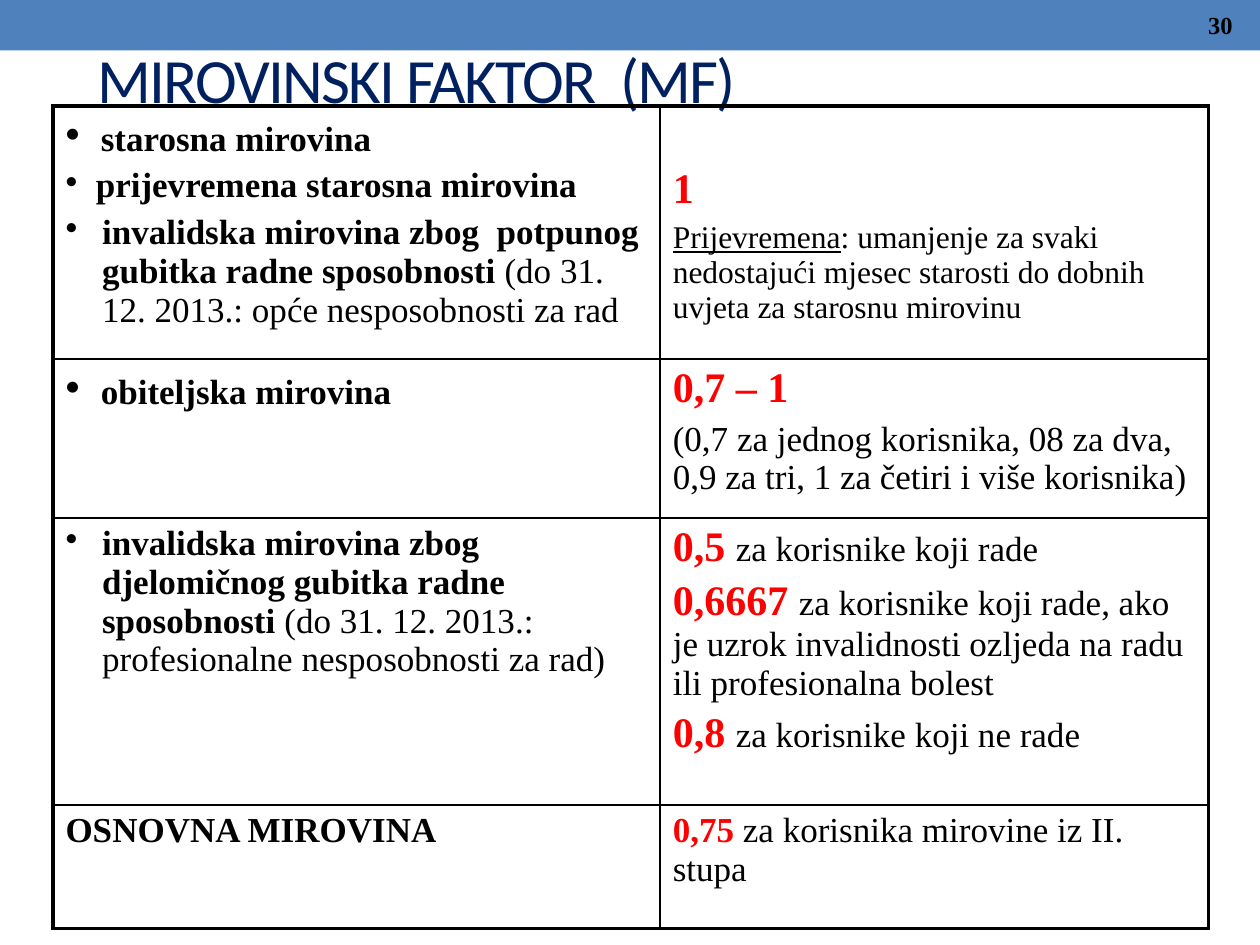
from lxml import etree
from pptx import Presentation
from pptx.dml.color import RGBColor
from pptx.enum.shapes import MSO_SHAPE
from pptx.enum.text import MSO_ANCHOR, PP_ALIGN
from pptx.oxml.ns import qn
from pptx.util import Inches, Pt

RECTANGLE = MSO_SHAPE.RECTANGLE
MIDDLE = MSO_ANCHOR.MIDDLE
LEFT, RIGHT = PP_ALIGN.LEFT, PP_ALIGN.RIGHT

COLORS = {"band": "4F81BD", "title": "002060", "text": "000000", "factor": "FF0000"}
SERIF = "Times New Roman"
GRID_COLUMNS, GRID_ROWS = 100, 75
SLIDE_WIDTH, SLIDE_HEIGHT = Inches(10), Inches(7.5)

FORMATS = {
    "bold": {"size": Pt(20), "bold": True, "color": "text"},
    "plain": {"size": Pt(20), "bold": False, "color": "text"},
    "note": {"size": Pt(18), "bold": False, "color": "text"},
    "note_head": {"size": Pt(18), "bold": False, "underline": True, "color": "text"},
    "factor": {"size": Pt(24), "bold": True, "color": "factor"},
    "small_factor": {"size": Pt(20), "bold": True, "color": "factor"},
    "page_number": {"size": Pt(14), "bold": True, "color": "text"},
}

# Paragraph layouts: hanging indent and tab stop in inches, bullet size in percent
LAYOUTS = {
    "body": {},
    "large_bullet": {"indent": 0.28, "bullet": 120},
    "tight_bullet": {"indent": 0.24, "bullet": 100},
    "bullet": {"indent": 0.29, "bullet": 100},
    "tabbed": {"tab": 1.33},
}

COLUMN_WIDTHS = [48.2, 43.5]
ROW_HEIGHTS = [20.1, 12.6, 22.8, 9.8]
TOP_MARGINS = {(0, 0): 0.11, (0, 1): 0.48, (1, 0): 0.11}

CELLS = [
    [
        [
            ("large_bullet", [("starosna mirovina", "bold")]),
            ("tight_bullet", [("prijevremena starosna mirovina", "bold")]),
            ("bullet", [
                ("invalidska mirovina zbog  potpunog gubitka radne sposobnosti ", "bold"),
                ("(do 31. 12. 2013.: opće nesposobnosti za rad", "plain")]),
        ],
        [
            ("body", [("1", "factor")]),
            ("body", [
                ("Prijevremena", "note_head"),
                (": umanjenje za svaki nedostajući mjesec starosti do dobnih "
                 "uvjeta za starosnu mirovinu", "note")]),
        ],
    ],
    [
        [("large_bullet", [("obiteljska mirovina", "bold")])],
        [
            ("body", [("0,7 – 1", "factor")]),
            ("body", [("(0,7 za jednog korisnika, 08 za dva, 0,9 za tri, "
                       "1 za četiri i više korisnika)", "plain")]),
        ],
    ],
    [
        [("bullet", [
            ("invalidska mirovina zbog djelomičnog gubitka radne sposobnosti ", "bold"),
            ("(do 31. 12. 2013.: profesionalne nesposobnosti za rad)", "plain")])],
        [
            ("tabbed", [("0,5\t", "factor"), ("za korisnike koji rade", "plain")]),
            ("tabbed", [
                ("0,6667\t", "factor"),
                ("za korisnike koji rade, ako je uzrok invalidnosti ozljeda na radu "
                 "ili profesionalna bolest", "plain")]),
            ("tabbed", [("0,8\t", "factor"), ("za korisnike koji ne rade", "plain")]),
        ],
    ],
    [
        [("body", [("OSNOVNA MIROVINA", "bold")])],
        [("body", [("0,75 ", "small_factor"),
                   ("za korisnika mirovine iz II. stupa", "plain")])],
    ],
]


def columns(count):
    return round(SLIDE_WIDTH * count / GRID_COLUMNS)


def rows(count):
    return round(SLIDE_HEIGHT * count / GRID_ROWS)


def grid_box(left, top, width, height):
    return columns(left), rows(top), columns(width), rows(height)


def color(name):
    return RGBColor.from_string(COLORS[name])


def add_span(para, text, format_name):
    span = para.add_run()
    span.text = text
    span.font.name = SERIF
    for name, value in FORMATS[format_name].items():
        if name == "color":
            span.font.color.rgb = color(value)
        else:
            setattr(span.font, name, value)


def lay_out_paragraph(para, indent=0, bullet=None, tab=None):
    properties = para._p.get_or_add_pPr()
    properties.set("marL", str(Inches(indent)))
    properties.set("indent", str(-Inches(indent)))
    if bullet:
        etree.SubElement(properties, qn("a:buSzPct"), val=str(bullet * 1000))
        etree.SubElement(properties, qn("a:buChar"), char="•")
    if tab:
        stops = etree.SubElement(properties, qn("a:tabLst"))
        etree.SubElement(stops, qn("a:tab"), pos=str(Inches(tab)), algn="l")


def fill_cell(cell, paragraphs):
    for index, (layout, spans) in enumerate(paragraphs):
        frame = cell.text_frame
        para = frame.add_paragraph() if index else frame.paragraphs[0]
        lay_out_paragraph(para, **LAYOUTS[layout])
        if index:
            para.space_before = Pt(4.5)
        for text, format_name in spans:
            add_span(para, text, format_name)


def draw_borders(cell, row, column):
    """Heavy lines on the outer edge of the table, thin lines inside."""
    outer = {
        "a:lnL": column == 0,
        "a:lnR": column == len(COLUMN_WIDTHS) - 1,
        "a:lnT": row == 0,
        "a:lnB": row == len(ROW_HEIGHTS) - 1,
    }
    properties = cell._tc.get_or_add_tcPr()
    for tag, is_outer in outer.items():
        line = etree.SubElement(properties, qn(tag), w=str(Pt(2.25 if is_outer else 1)))
        fill = etree.SubElement(line, qn("a:solidFill"))
        etree.SubElement(fill, qn("a:srgbClr"), val=COLORS["text"])


def add_band(page, box):
    band = page.shapes.add_shape(RECTANGLE, *box)
    band.shadow.inherit = False
    band.fill.solid()
    band.fill.fore_color.rgb = color("band")
    band.line.fill.background()
    page.shapes.title.element.addprevious(band.element)


def format_title(page, box):
    title = page.shapes.title
    title.left, title.top, title.width, title.height = box
    frame = title.text_frame
    frame.vertical_anchor = MIDDLE
    para = frame.paragraphs[0]
    para.alignment = LEFT
    span = para.add_run()
    span.text = "MIROVINSKI FAKTOR  (MF)"
    span.font.name = "Calibri"
    span.font.size = Pt(36)
    span.font.color.rgb = color("title")
    span._r.get_or_add_rPr().set("spc", "-100")


def add_factor_table(page, box):
    table = page.shapes.add_table(len(ROW_HEIGHTS), len(COLUMN_WIDTHS), *box).table
    table.first_row = table.horz_banding = False
    for column, width in zip(table.columns, COLUMN_WIDTHS):
        column.width = columns(width)
    for row, height in zip(table.rows, ROW_HEIGHTS):
        row.height = rows(height)
    for row, row_cells in enumerate(CELLS):
        for column, paragraphs in enumerate(row_cells):
            cell = table.cell(row, column)
            cell.margin_top = Inches(TOP_MARGINS.get((row, column), 0.05))
            draw_borders(cell, row, column)
            cell.fill.background()
            fill_cell(cell, paragraphs)


def add_page_number(page, box):
    frame = page.shapes.add_textbox(*box).text_frame
    frame.word_wrap = True
    frame.vertical_anchor = MIDDLE
    para = frame.paragraphs[0]
    para.alignment = RIGHT
    add_span(para, "30", "page_number")


def main():
    deck = Presentation()
    deck.slide_width, deck.slide_height = SLIDE_WIDTH, SLIDE_HEIGHT
    page = deck.slides.add_slide(deck.slide_layouts[5])
    add_band(page, grid_box(0, 0, GRID_COLUMNS, 4))
    format_title(page, grid_box(6.7, 0, 85, 12.5))
    add_factor_table(page, grid_box(4.2, 8.4, sum(COLUMN_WIDTHS), sum(ROW_HEIGHTS)))
    add_page_number(page, grid_box(90.9, 0.2, 7.9, 3.6))
    deck.save("out.pptx")


if __name__ == "__main__":
    main()
